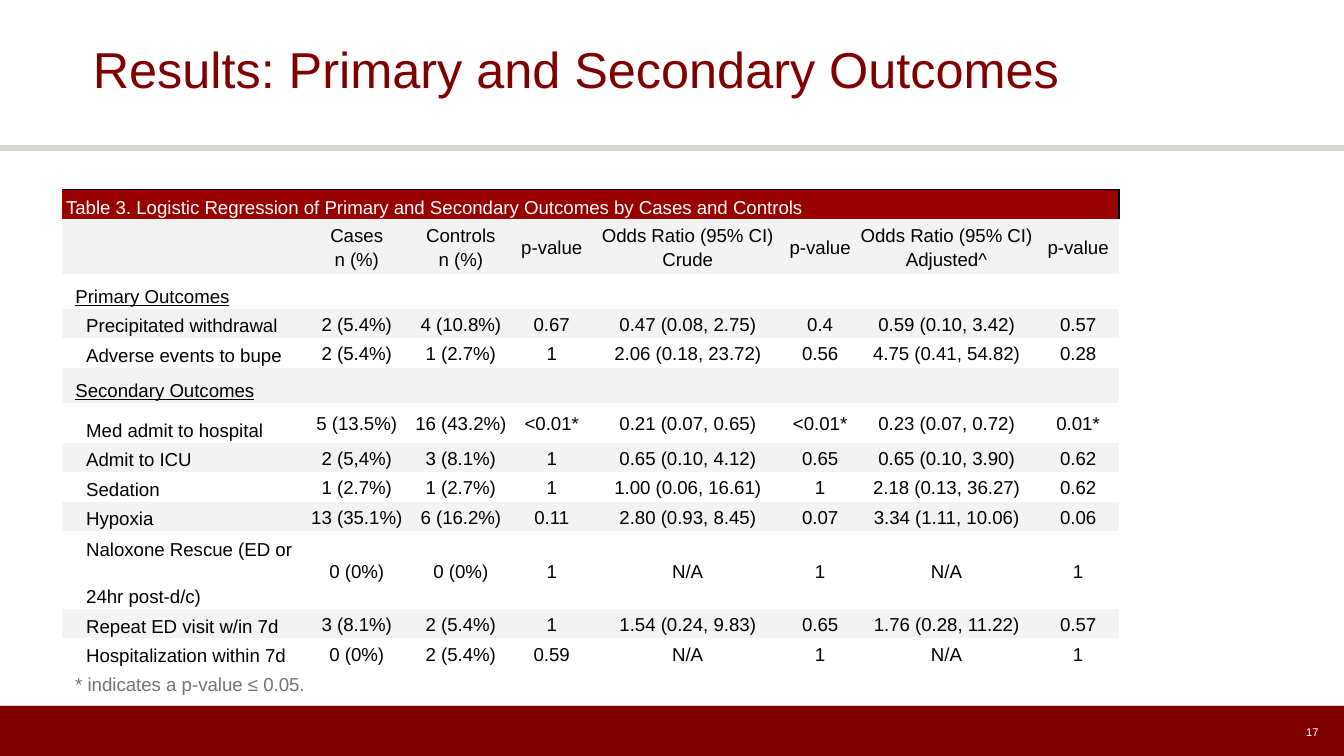
from lxml import etree
from pptx import Presentation
from pptx.dml.color import RGBColor
from pptx.enum.shapes import MSO_CONNECTOR, MSO_SHAPE
from pptx.enum.text import MSO_ANCHOR, PP_ALIGN
from pptx.oxml.ns import qn
from pptx.util import Pt

LEFT, CENTER, RIGHT = PP_ALIGN.LEFT, PP_ALIGN.CENTER, PP_ALIGN.RIGHT
TOP, MIDDLE, BOTTOM = MSO_ANCHOR.TOP, MSO_ANCHOR.MIDDLE, MSO_ANCHOR.BOTTOM
STRAIGHT, RECTANGLE = MSO_CONNECTOR.STRAIGHT, MSO_SHAPE.RECTANGLE

MAROON = RGBColor(0x80, 0x00, 0x00)
CRIMSON = RGBColor(0x98, 0x00, 0x00)
RULE_GRAY = RGBColor(0xD6, 0xD6, 0xCE)
BAND_GRAY = RGBColor(0xF3, 0xF3, 0xF3)
NOTE_GRAY = RGBColor(0x73, 0x73, 0x73)
WHITE = RGBColor(0xFF, 0xFF, 0xFF)
BLACK = RGBColor(0x00, 0x00, 0x00)

FONT = "Arial"
NO_STYLE_NO_GRID = "{2D5ABB26-0587-4C30-8999-92F81FD0307C}"

# Content
TITLE = "Results: Primary and Secondary Outcomes"
PAGE_NUMBER = "17"
FOOTNOTE = "* indicates a p-value ≤ 0.05."
CAPTION = "Table 3. Logistic Regression of Primary and Secondary Outcomes by Cases and Controls"
HEADER = ["", "Cases\nn (%)", "Controls\nn (%)", "p-value", "Odds Ratio (95% CI)\nCrude",
          "p-value", "Odds Ratio (95% CI)\nAdjusted^", "p-value"]
OUTCOMES = [
    ["Primary Outcomes"],
    ["Precipitated withdrawal", "2 (5.4%)", "4 (10.8%)", "0.67", "0.47 (0.08, 2.75)", "0.4", "0.59 (0.10, 3.42)", "0.57"],
    ["Adverse events to bupe", "2 (5.4%)", "1 (2.7%)", "1", "2.06 (0.18, 23.72)", "0.56", "4.75 (0.41, 54.82)", "0.28"],
    ["Secondary Outcomes"],
    ["Med admit to hospital", "5 (13.5%)", "16 (43.2%)", "<0.01*", "0.21 (0.07, 0.65)", "<0.01*", "0.23 (0.07, 0.72)", "0.01*"],
    ["Admit to ICU", "2 (5,4%)", "3 (8.1%)", "1", "0.65 (0.10, 4.12)", "0.65", "0.65 (0.10, 3.90)", "0.62"],
    ["Sedation", "1 (2.7%)", "1 (2.7%)", "1", "1.00 (0.06, 16.61)", "1", "2.18 (0.13, 36.27)", "0.62"],
    ["Hypoxia", "13 (35.1%)", "6 (16.2%)", "0.11", "2.80 (0.93, 8.45)", "0.07", "3.34 (1.11, 10.06)", "0.06"],
    ["Naloxone Rescue (ED or\n24hr post-d/c)", "0 (0%)", "0 (0%)", "1", "N/A", "1", "N/A", "1"],
    ["Repeat ED visit w/in 7d", "3 (8.1%)", "2 (5.4%)", "1", "1.54 (0.24, 9.83)", "0.65", "1.76 (0.28, 11.22)", "0.57"],
    ["Hospitalization within 7d", "0 (0%)", "2 (5.4%)", "0.59", "N/A", "1", "N/A", "1"],
]

# Layout
SLIDE_WIDTH, SLIDE_HEIGHT = 720, 405
FOOTER_TOP = 378
TABLE_LEFT, TABLE_TOP = 33.2, 101.6
COLUMN_WIDTHS = [129.8, 56.2, 55.4, 42, 103.7, 38.2, 97.2, 43.9]
LINE_ROW, SECTION_ROW = 15.8, 18.8
ROW_HEIGHTS = [16, 28.2, SECTION_ROW, LINE_ROW, LINE_ROW, SECTION_ROW, 21.4,
               LINE_ROW, LINE_ROW, LINE_ROW, 41.8, LINE_ROW, LINE_ROW]
CELL_MARGIN, SECTION_MARGIN, OUTCOME_MARGIN = 2.2, 7.2, 13
CELL_PADDING = 0.7
LABEL_GAP = 12.5


def write_text(frame, text, size, color, align=LEFT, spacing=1.0, underline=False, gap=0):
    for index, line in enumerate(text.split("\n")):
        paragraph = frame.add_paragraph() if index else frame.paragraphs[0]
        paragraph.alignment = align
        paragraph.line_spacing = spacing
        if index and gap:
            paragraph.space_before = Pt(gap)
        run = paragraph.add_run()
        run.text = line
        run.font.name = FONT
        run.font.size = Pt(size)
        run.font.color.rgb = color
        if underline:
            run.font.underline = True


def set_margins(holder, horizontal, vertical):
    holder.margin_left = holder.margin_right = Pt(horizontal)
    holder.margin_top = holder.margin_bottom = Pt(vertical)


def add_text_box(slide, box, margins, anchor, text, size, color, **style):
    frame = slide.shapes.add_textbox(*map(Pt, box)).text_frame
    frame.word_wrap = True
    frame.vertical_anchor = anchor
    set_margins(frame, *margins)
    write_text(frame, text, size, color, **style)


def add_rule(slide, y, width):
    rule = slide.shapes.add_connector(STRAIGHT, 0, Pt(y), Pt(SLIDE_WIDTH), Pt(y))
    rule.line.color.rgb = RULE_GRAY
    rule.line.width = Pt(width)
    etree.SubElement(rule._element.spPr, qn("a:effectLst"))


def set_borders(cell, sides, color):
    properties = cell._tc.get_or_add_tcPr()
    for position, side in enumerate(sides):
        line = etree.Element(qn("a:" + side), w=str(Pt(0.75)))
        fill = etree.SubElement(line, qn("a:solidFill"))
        etree.SubElement(fill, qn("a:srgbClr"), val=str(color))
        properties.insert(position, line)


def fill_cell(cell, text, fill, anchor=MIDDLE, left=CELL_MARGIN, color=BLACK, **style):
    cell.fill.solid()
    cell.fill.fore_color.rgb = fill
    cell.vertical_anchor = anchor
    set_margins(cell, CELL_MARGIN, CELL_PADDING)
    cell.margin_left = Pt(left)
    if text:
        write_text(cell.text_frame, text, 10, color, spacing=1.15, **style)
    else:
        # Keeps empty cells from stretching their row
        etree.SubElement(cell.text_frame.paragraphs[0]._p, qn("a:endParaRPr"), sz="1000")


def add_outcome_table(slide):
    shape = slide.shapes.add_table(len(ROW_HEIGHTS), len(COLUMN_WIDTHS), Pt(TABLE_LEFT), Pt(TABLE_TOP),
                                   Pt(sum(COLUMN_WIDTHS)), Pt(sum(ROW_HEIGHTS)))
    table = shape.table
    table.first_row = table.horz_banding = False
    table._tbl.tblPr.find(qn("a:tableStyleId")).text = NO_STYLE_NO_GRID
    for column, width in zip(table.columns, COLUMN_WIDTHS):
        column.width = Pt(width)
    for row, height in zip(table.rows, ROW_HEIGHTS):
        row.height = Pt(height)

    # Caption across all columns
    caption = table.cell(0, 0)
    caption.merge(table.cell(0, len(COLUMN_WIDTHS) - 1))
    fill_cell(caption, CAPTION, CRIMSON, BOTTOM, color=WHITE)
    set_borders(caption, ["lnR", "lnT"], BLACK)

    # Header, section and outcome rows in alternating bands
    for row_index, values in enumerate([HEADER] + OUTCOMES, start=1):
        fill = BAND_GRAY if row_index % 2 else WHITE
        is_section = len(values) == 1
        label, *results = values + [""] * (len(COLUMN_WIDTHS) - len(values))
        fill_cell(table.cell(row_index, 0), label, fill, BOTTOM,
                  left=SECTION_MARGIN if is_section else OUTCOME_MARGIN,
                  underline=is_section, gap=LABEL_GAP)
        for column_index, result in enumerate(results, start=1):
            fill_cell(table.cell(row_index, column_index), result, fill, align=CENTER)


def main():
    presentation = Presentation()
    presentation.slide_width, presentation.slide_height = Pt(SLIDE_WIDTH), Pt(SLIDE_HEIGHT)
    slide = presentation.slides.add_slide(presentation.slide_layouts[6])

    # Title rule and footer bar
    add_rule(slide, 79.2, 3)
    footer = slide.shapes.add_shape(RECTANGLE, 0, Pt(FOOTER_TOP), Pt(SLIDE_WIDTH), Pt(SLIDE_HEIGHT - FOOTER_TOP))
    footer.shadow.inherit = False
    footer.fill.solid()
    footer.fill.fore_color.rgb = MAROON
    footer.line.fill.background()
    add_rule(slide, FOOTER_TOP, 0.75)

    # Title, page number, table and footnote
    add_text_box(slide, (49.7, 0, 620.6, 77.8), (0, 3), MIDDLE, TITLE, 27, MAROON, spacing=0.9)
    add_text_box(slide, (508.3, 381.6, 203, 21.6), (5, 3), MIDDLE, PAGE_NUMBER, 6, WHITE, align=RIGHT)
    add_outcome_table(slide)
    add_text_box(slide, (33.2, 354.2, 236.2, 26.6), (7.2, 7.2), TOP, FOOTNOTE, 10, NOTE_GRAY)

    presentation.save("out.pptx")


if __name__ == "__main__":
    main()
